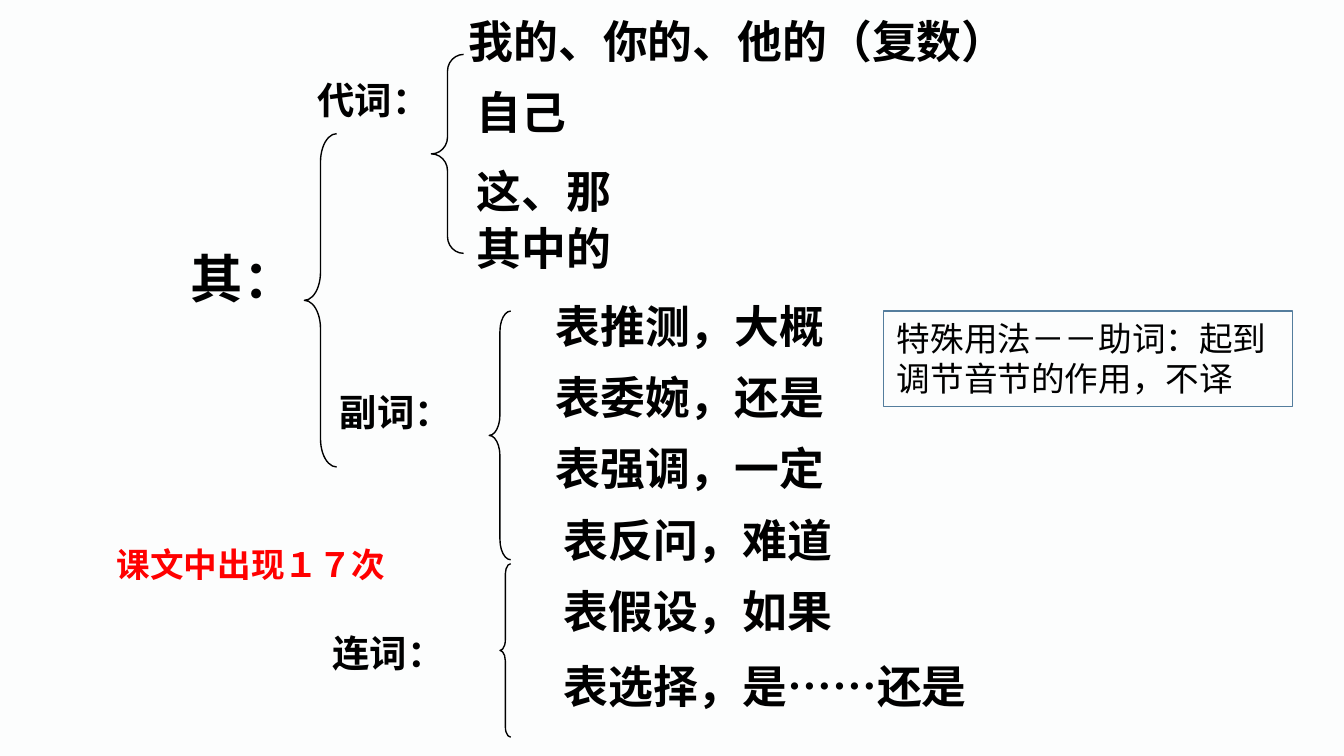
from dataclasses import dataclass

from lxml import etree
from pptx import Presentation
from pptx import util as u
from pptx.dml.color import RGBColor
from pptx.enum import lang, shapes, text
from pptx.oxml.ns import qn

PX = 4572


@dataclass(frozen=True)
class Theme:
    background: str = "FCFDFD"
    ink: str = "000000"
    accent: str = "FF0000"
    border: str = "547D9D"
    cjk: str = "Noto Sans CJK SC"
    latin: str = "Arial"
    root: int = 28
    item: int = 24
    branch: int = 20
    note: int = 18
    line: float = 0.75


THEME = Theme()

BRACES = [
    ((453, 199, 48, 496), 0.877),
    ((642, 81, 48, 296), 0.519),
    ((728, 463, 32, 370), 0.955),
    ((744, 839, 16, 258), 0.955),
]
BRANCHES = [
    ("代词：", (453, 105, 308, 88)),
    ("副词：", (486, 570, 320, 88)),
    ("连词：", (475, 928, 320, 88)),
]
MEANINGS = [
    ("我的、你的、他的（复数）", 678, 10, 1146),
    ("自己", 690, 116, 176),
    ("这、那", 690, 234, 436),
    ("其中的", 690, 318, 414),
    ("表推测，大概", 807, 434, 626),
    ("表委婉，还是", 807, 540, 650),
    ("表强调，一定", 807, 646, 698),
    ("表反问，难道", 819, 753, 650),
    ("表假设，如果", 819, 859, 446),
    ("表选择，是……还是", 819, 971, 892),
]


def place(*lengths):
    return [u.Emu(length * PX) for length in lengths]


def write(shape, words, size, color=THEME.ink, font=THEME.cjk, bold=True, wrap=True):
    frame = shape.text_frame
    frame.word_wrap = wrap
    frame.auto_size = text.MSO_AUTO_SIZE.SHAPE_TO_FIT_TEXT
    frame.vertical_anchor = text.MSO_ANCHOR.TOP
    paragraph = frame.paragraphs[0]
    paragraph.alignment = text.PP_ALIGN.LEFT
    run = paragraph.add_run()
    run.text = words
    run.font.size = u.Pt(size)
    run.font.bold = bold
    run.font.color.rgb = RGBColor.from_string(color)
    run.font.name = font
    run.font.language_id = lang.MSO_LANGUAGE_ID.SIMPLIFIED_CHINESE
    latin = run.font._element.find(qn("a:latin"))
    east_asian = etree.Element(qn("a:ea"), typeface=THEME.cjk)
    latin.addnext(east_asian)


def add_label(slide, words, box, size, **style):
    shape = slide.shapes.add_textbox(*place(*box))
    write(shape, words, size, **style)


def add_outline(slide, kind, box, color):
    shape = slide.shapes.add_shape(kind, *place(*box))
    shape.shadow.inherit = False
    shape.fill.background()
    shape.line.color.rgb = RGBColor.from_string(color)
    shape.line.width = u.Pt(THEME.line)
    return shape


def add_brace(slide, box, curve):
    brace = add_outline(slide, shapes.MSO_SHAPE.LEFT_BRACE, box, THEME.ink)
    brace.adjustments[0] = curve
    brace.adjustments[1] = 0.5


def add_title(slide, words, box):
    title = slide.shapes.title
    title.left, title.top, title.width, title.height = place(*box)
    write(title, words, THEME.root)


def main():
    presentation = Presentation()
    presentation.slide_width, presentation.slide_height = place(2000, 1125)
    slide = presentation.slides.add_slide(presentation.slide_layouts[5])
    slide.background.fill.solid()
    slide.background.fill.fore_color.rgb = RGBColor.from_string(THEME.background)

    add_title(slide, "其：", (264, 356, 354, 114))
    for box, curve in BRACES:
        add_brace(slide, box, curve)
    for words, box in BRANCHES:
        add_label(slide, words, box, THEME.branch)
    for words, left, top, width in MEANINGS:
        add_label(slide, words, (left, top, width, 100), THEME.item)
    add_label(slide, "课文中出现１７次", (154, 799, 444, 80), THEME.note,
              color=THEME.accent, font=THEME.latin, wrap=False)

    usage = add_outline(slide, shapes.MSO_SHAPE.RECTANGLE, (1315, 463, 608, 142), THEME.border)
    write(usage, "特殊用法－－助词：起到调节音节的作用，不译", THEME.note,
          font=THEME.latin, bold=False)
    presentation.save("out.pptx")


if __name__ == "__main__":
    main()
